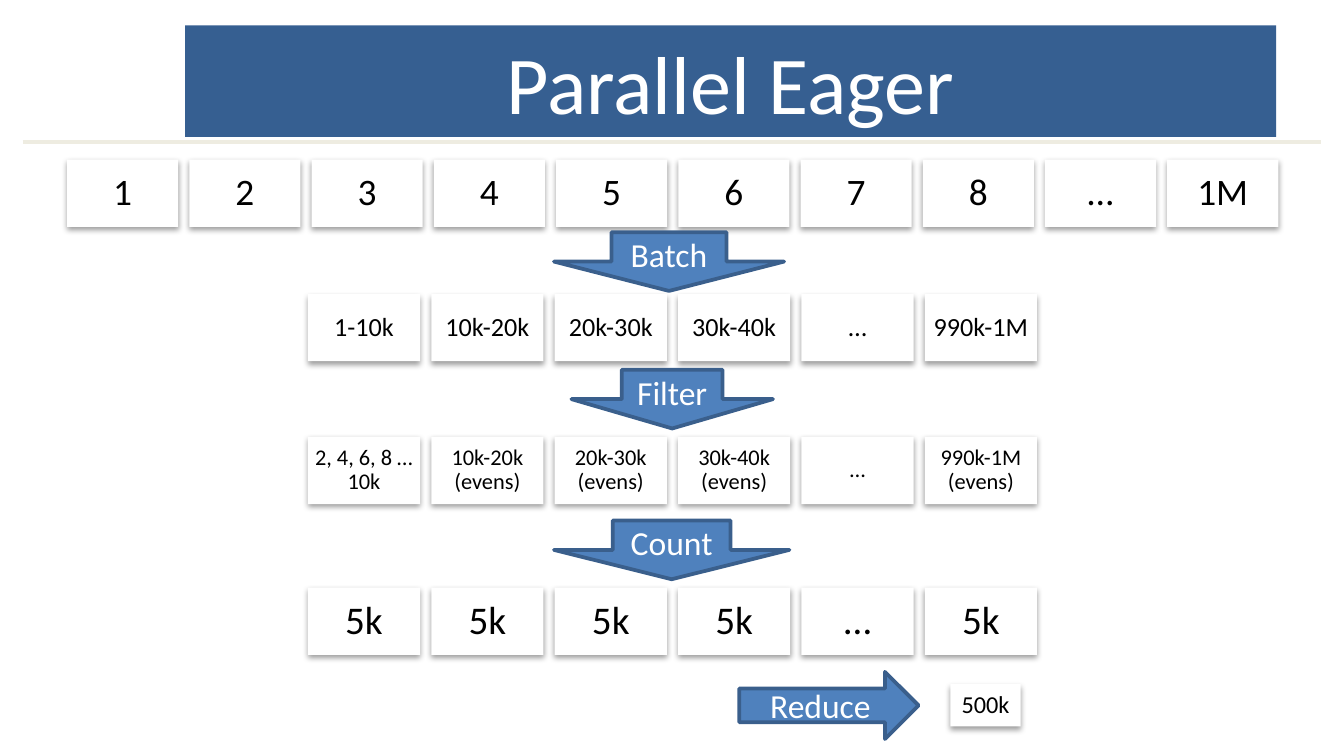
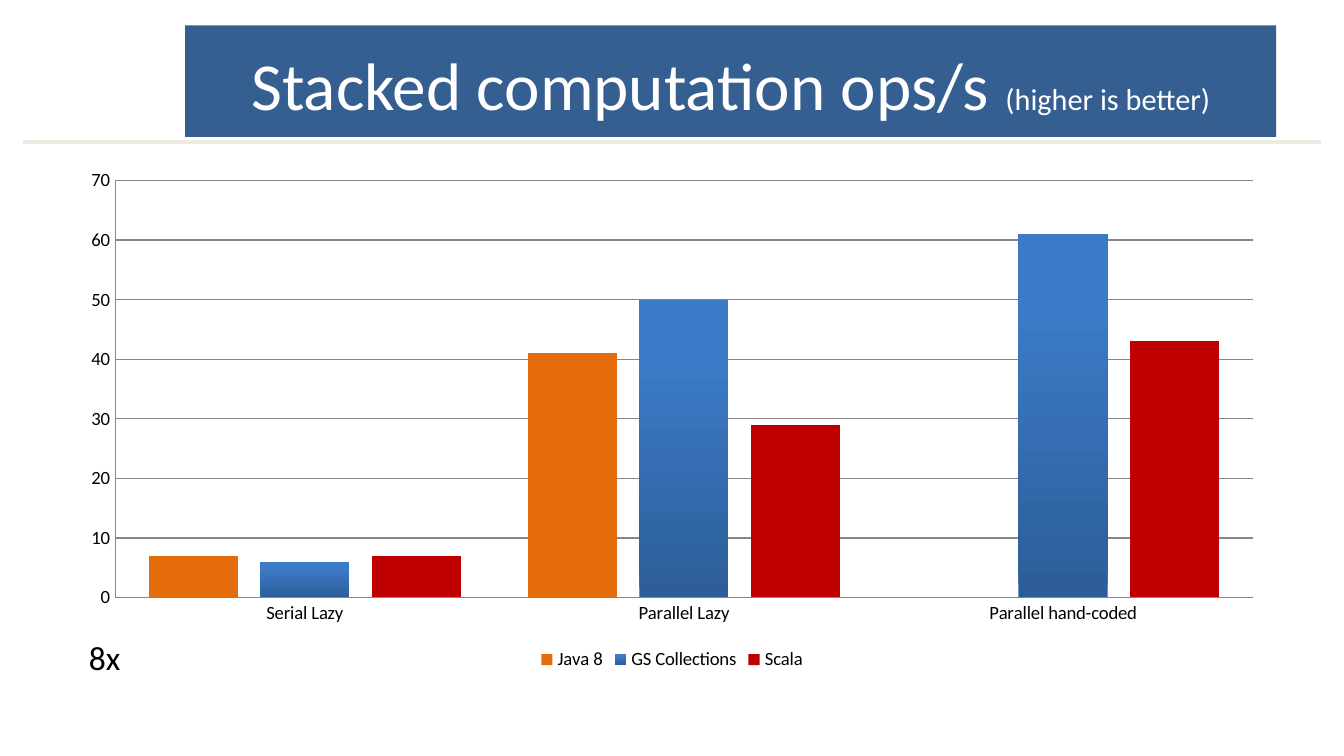
from lxml import etree
from pptx import Presentation
from pptx.chart.data import CategoryChartData
from pptx.dml.color import RGBColor
from pptx.enum.chart import XL_CHART_TYPE as ChartType
from pptx.enum.chart import XL_LEGEND_POSITION as LegendPosition
from pptx.enum.chart import XL_TICK_MARK as TickMark
from pptx.enum.shapes import MSO_CONNECTOR as Connector
from pptx.enum.shapes import MSO_SHAPE as Shape
from pptx.enum.text import MSO_ANCHOR as Anchor
from pptx.enum.text import PP_ALIGN as Align
from pptx.oxml.ns import qn
from pptx.util import Cm, Pt

FONT = "Calibri"
COLORS = {
    "white": "FFFFFF",
    "black": "000000",
    "band": "365F91",
    "rule": "EEECE1",
    "arrow": "4F81BD",
    "arrow edge": "3A5F8C",
    "grid": "868686",
    "orange": "E46C0A",
    "blue bottom": "2C5D98",
    "blue top": "3C7BC7",
    "red": "C00000",
}
CARD_HEIGHT = 1.27


def rgb(name):
    return RGBColor.from_string(COLORS[name])


def add_soft_shadow(shape):
    effects = shape._element.spPr.find(qn("a:effectLst"))
    shadow = etree.SubElement(effects, qn("a:outerShdw"), blurRad="40000",
                              dist="20000", dir="5400000", rotWithShape="0")
    color = etree.SubElement(shadow, qn("a:srgbClr"), val=COLORS["black"])
    etree.SubElement(color, qn("a:alpha"), val="38000")


class Deck:
    def __init__(self):
        self.prs = Presentation()
        self.prs.slide_width, self.prs.slide_height = Cm(25.4), Cm(14.29)
        self.slide = None

    def new_slide(self, *title_runs):
        """Start a slide with its rule and title band; runs are (text, size)."""
        self.slide = self.prs.slides.add_slide(self.prs.slide_layouts[6])
        self.rule(0.43, 24.97, 2.69)
        band = self.block(Shape.RECTANGLE, (3.5, 0.48, 20.62, 2.11), "band")
        self.set_text(band, title_runs, "white")

    def rule(self, left, right, y):
        line = self.slide.shapes.add_connector(
            Connector.STRAIGHT, Cm(left), Cm(y), Cm(right), Cm(y))
        line.line.color.rgb = rgb("rule")
        line.line.width = Pt(2.25)
        etree.SubElement(line._element.spPr, qn("a:effectLst"))

    def block(self, kind, box, fill, edge=None):
        shape = self.slide.shapes.add_shape(kind, *map(Cm, box))
        shape.shadow.inherit = False
        shape.fill.solid()
        shape.fill.fore_color.rgb = rgb(fill)
        if edge:
            shape.line.color.rgb = rgb(edge)
            shape.line.width = Pt(2)
        else:
            shape.line.fill.background()
        return shape

    def set_text(self, shape, runs, color, align=Align.CENTER):
        paragraph = shape.text_frame.paragraphs[0]
        paragraph.alignment = align
        font = paragraph.font
        font.name, font.color.rgb = FONT, rgb(color)
        if len(runs) == 1:
            font.size = Pt(runs[0][1])
        for text, size in runs:
            run = paragraph.add_run()
            run.text = text
            if len(runs) > 1:
                run.font.size = Pt(size)
        return paragraph

    def card(self, text, box, size, inset):
        card = self.block(Shape.RECTANGLE, box, "white")
        add_soft_shadow(card)
        frame = card.text_frame
        frame.word_wrap = True
        frame.vertical_anchor = Anchor.MIDDLE
        frame.margin_left = frame.margin_right = Cm(inset)
        frame.margin_top = frame.margin_bottom = Cm(inset)
        self.set_text(card, [(text, size)], "black").line_spacing = 0.9

    def card_row(self, texts, top, size, inset, left=5.82, width=2.12):
        """Lay cards side by side with gaps of a tenth of their width."""
        for i, text in enumerate(texts):
            self.card(text, (left + i * width * 1.1, top, width, CARD_HEIGHT),
                      size, inset)

    def arrow(self, text, kind, box):
        arrow = self.block(kind, box, "arrow", "arrow edge")
        self.set_text(arrow, [(text, 18)], "white")

    def label(self, text, box, size):
        label = self.slide.shapes.add_textbox(*map(Cm, box))
        label.text_frame.word_wrap = False
        self.set_text(label, [(text, size)], "black", Align.LEFT)

    def column_chart(self, box, categories, series):
        """Draw clustered columns; series are (name, values, colours)."""
        data = CategoryChartData()
        data.categories = categories
        for name, values, _ in series:
            data.add_series(name, values)
        chart = self.slide.shapes.add_chart(
            ChartType.COLUMN_CLUSTERED, *map(Cm, box), data).chart
        chart.has_title = False
        chart.font.name, chart.font.size = FONT, Pt(10)
        chart.font.color.rgb = rgb("black")
        chart.has_legend = True
        chart.legend.position = LegendPosition.BOTTOM
        chart.legend.include_in_layout = False

        ops = chart.value_axis
        ops.minimum_scale, ops.maximum_scale, ops.major_unit = 0, 70, 10
        ops.has_major_gridlines = True
        ops.major_gridlines.format.line.color.rgb = rgb("grid")
        for axis in (ops, chart.category_axis):
            axis.major_tick_mark = axis.minor_tick_mark = TickMark.NONE
            axis.format.line.color.rgb = rgb("grid")

        plot = chart.plots[0]
        plot.gap_width, plot.overlap, plot.vary_by_categories = 75, -25, False
        for columns, (_, _, colors) in zip(plot.series, series):
            columns.invert_if_negative = False
            fill = columns.format.fill
            if len(colors) == 1:
                fill.solid()
                fill.fore_color.rgb = rgb(colors[0])
                continue
            fill.gradient()
            fill.gradient_angle = 90
            for stop, color, place in zip(fill.gradient_stops, colors, (0, 0.8)):
                stop.color.rgb = rgb(color)
                stop.position = place


def build_parallel_eager(deck):
    deck.new_slide(("Parallel Eager", 44))
    ranges = ["10k-20k", "20k-30k", "30k-40k", "…", "990k-1M"]
    evens = [r if r == "…" else f"{r} (evens)" for r in ranges]
    numbers = [*map(str, range(1, 9)), "…", "1M"]
    deck.card_row(numbers, 3.02, 20, 0.2, left=1.27, width=2.1)
    deck.card_row(["1-10k", *ranges], 5.56, 14, 0.14)
    deck.card_row(["2, 4, 6, 8 … 10k", *evens], 8.26, 12, 0.12)
    deck.card_row(["5k"] * 4 + ["…", "5k"], 11.11, 21, 0.22)
    deck.card("500k", (17.96, 12.93, 1.33, 0.8), 13, 0.12)
    for step, left, top, width in (("Batch", 10.47, 4.39, 4.35),
                                   ("Filter", 10.8, 6.99, 3.81),
                                   ("Count", 10.47, 9.84, 4.45)):
        deck.arrow(step, Shape.DOWN_ARROW, (left, top, width, 1.11))
    deck.arrow("Reduce", Shape.RIGHT_ARROW, (13.97, 12.7, 3.39, 1.27))


def build_stacked_computation(deck):
    deck.new_slide(("Stacked computation ops/s", 36), (" ", 39.6),
                   ("(higher is better)", 16.2))
    deck.label("8x", (1.43, 11.91, 1.12, 1.03), 18)
    deck.column_chart(
        (1.27, 3.02, 22.86, 9.75),
        ["Serial Lazy", "Parallel Lazy", "Parallel hand-coded"],
        [("Java 8", (7, 41, None), ["orange"]),
         ("GS Collections", (6, 50, 61), ["blue bottom", "blue top"]),
         ("Scala", (7, 29, 43), ["red"])])


def main():
    deck = Deck()
    build_parallel_eager(deck)
    build_stacked_computation(deck)
    deck.prs.save("out.pptx")


if __name__ == "__main__":
    main()
